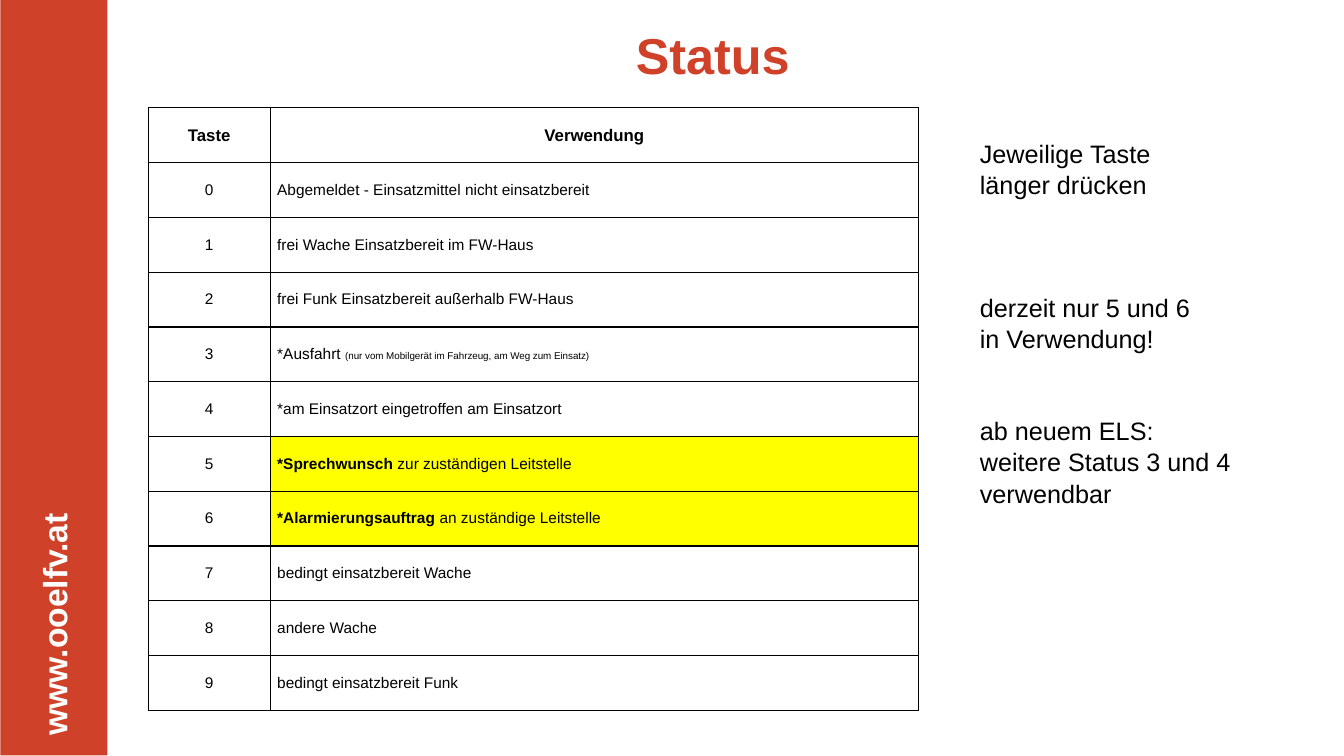
from lxml import etree
from pptx import Presentation
from pptx.dml.color import RGBColor
from pptx.enum.shapes import MSO_SHAPE
from pptx.enum.text import MSO_ANCHOR, MSO_AUTO_SIZE, PP_ALIGN
from pptx.oxml.ns import qn
from pptx.util import Inches, Pt

LEFT, CENTER = PP_ALIGN.LEFT, PP_ALIGN.CENTER
MIDDLE = MSO_ANCHOR.MIDDLE
RED, BLACK, WHITE, YELLOW = "CF4128", "000000", "FFFFFF", "FFFF00"


def add_text(paragraph, text, size, color=BLACK, bold=False):
    run = paragraph.add_run()
    run.text = text
    font_format = {"name": "Arial", "size": Pt(size), "bold": bold}
    for attribute, value in font_format.items():
        setattr(run.font, attribute, value)
    run.font.color.rgb = RGBColor.from_string(color)


def add_borders(cell):
    """Draw a thin black line on all four sides of a table cell."""
    properties = cell._tc.get_or_add_tcPr()
    for side in ("lnL", "lnR", "lnT", "lnB"):
        line = etree.SubElement(properties, qn(f"a:{side}"), w=str(Pt(1)))
        fill = etree.SubElement(line, qn("a:solidFill"))
        etree.SubElement(fill, qn("a:srgbClr"), val=BLACK)


prs = Presentation()
prs.slide_width, prs.slide_height = Inches(13.33), Inches(7.5)
slide = prs.slides.add_slide(prs.slide_layouts[5])

# Red side banner, turned to read upwards
banner = slide.shapes.add_shape(
    MSO_SHAPE.RECTANGLE, Inches(-3.22), Inches(3.21), Inches(7.51), Inches(1.06))
banner.rotation = 270
banner.shadow.inherit = False
banner.fill.solid()
banner.fill.fore_color.rgb = RGBColor.from_string(RED)
banner.line.fill.background()
banner.text_frame.margin_left = Inches(0.2)
banner.text_frame.vertical_anchor = MIDDLE
address = banner.text_frame.paragraphs[0]
address.alignment = LEFT
add_text(address, "www.ooelfv.at", 24, WHITE, True)

# Title
title = slide.shapes.title
title.left, title.top = Inches(2.97), Inches(0.17)
title.width, title.height = Inches(8.2), Inches(0.74)
title.text_frame.vertical_anchor = MIDDLE
heading = title.text_frame.paragraphs[0]
heading.alignment = CENTER
add_text(heading, "Status", 36, RED, True)

# Status table: each usage is a list of (text, size, bold)
usages = [
    [("Abgemeldet - Einsatzmittel nicht einsatzbereit", 11, False)],
    [("frei Wache Einsatzbereit im FW-Haus", 11, False)],
    [("frei Funk Einsatzbereit außerhalb FW-Haus", 11, False)],
    [("*Ausfahrt ", 11, False),
     ("(nur vom Mobilgerät im Fahrzeug, am Weg zum Einsatz)", 7, False)],
    [("*am Einsatzort eingetroffen am Einsatzort", 11, False)],
    [("*Sprechwunsch", 11, True), (" zur zuständigen Leitstelle", 11, False)],
    [("*Alarmierungsauftrag", 11, True), (" an zuständige Leitstelle", 11, False)],
    [("bedingt einsatzbereit Wache", 11, False)],
    [("andere Wache", 11, False)],
    [("bedingt einsatzbereit Funk", 11, False)],
]
rows = [([("Taste", 12, True)], [("Verwendung", 12, True)])]
rows += [([(str(key), 11, False)], usage) for key, usage in enumerate(usages)]
keys_in_use = (5, 6)

status_table = slide.shapes.add_table(
    len(rows), 2, Inches(1.47), Inches(1.07), Inches(7.64), Inches(5.98)).table
status_table.first_row = status_table.horz_banding = False
status_table.columns[0].width = Inches(1.21)
status_table.columns[1].width = Inches(6.43)
cell_format = {
    "margin_left": Inches(0.07), "margin_right": Inches(0.07),
    "margin_top": 0, "margin_bottom": 0, "vertical_anchor": MIDDLE,
}
for row, contents in enumerate(rows):
    for column, pieces in enumerate(contents):
        cell = status_table.cell(row, column)
        for attribute, value in cell_format.items():
            setattr(cell, attribute, value)
        add_borders(cell)
        if column == 1 and row - 1 in keys_in_use:
            cell.fill.solid()
            cell.fill.fore_color.rgb = RGBColor.from_string(YELLOW)
        else:
            cell.fill.background()
        paragraph = cell.text_frame.paragraphs[0]
        paragraph.alignment = CENTER if row == 0 or column == 0 else LEFT
        for text, size, bold in pieces:
            add_text(paragraph, text, size, bold=bold)

# Remarks beside the table: (text, points of space before)
remarks = [
    ("Jeweilige Taste\vlänger drücken", None),
    ("derzeit nur 5 und 6\vin Verwendung!", 65),
    ("ab neuem ELS:\vweitere Status 3 und 4", 43),
    ("verwendbar", None),
]
remark_frame = slide.shapes.add_textbox(
    Inches(9.62), Inches(1.31), Inches(2.71), Inches(3.74)).text_frame
remark_frame.word_wrap = False
remark_frame.auto_size = MSO_AUTO_SIZE.NONE
for index, (text, gap) in enumerate(remarks):
    remark = remark_frame.add_paragraph() if index else remark_frame.paragraphs[0]
    remark.alignment = LEFT
    remark.line_spacing = 1.04
    if gap:
        remark.space_before = Pt(gap)
    for number, line in enumerate(text.split("\v")):
        if number:
            remark.add_line_break()
        add_text(remark, line, 18)

prs.save("out.pptx")
